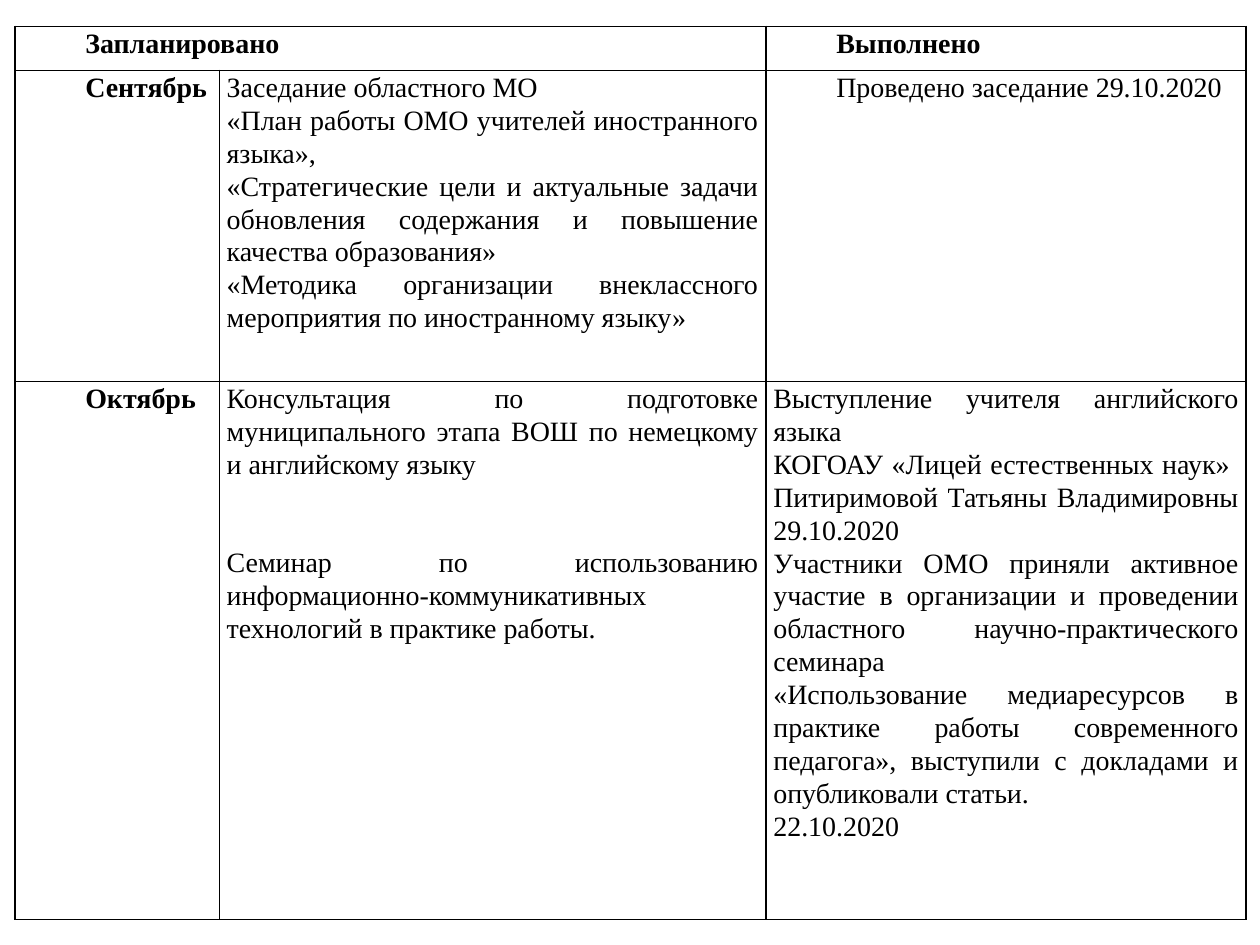
"""Builds a slide with a table of planned and completed work by month."""
import pptx
import pptx.dml.color
import pptx.enum.text
import pptx.oxml
import pptx.oxml.ns
import pptx.util
from pptx.util import Cm, Pt

THEME = {
    "font": "Times New Roman",
    "size": 16,
    "ink": "000000",
    "paper": "FFFFFF",
    "border": 1,
    "line_spacing": 1.06,
    "indent": 1.27,
    "margin": 0.15,
    "gap": 37.6,
}

HEADING, BODY, INDENTED, SEPARATE = "heading", "body", "indented", "separate"

ROWS = [
    [
        [("Запланировано", HEADING)],
        [],
        [("Выполнено", HEADING)],
    ],
    [
        [("Сентябрь", HEADING)],
        [
            ("Заседание областного МО", BODY),
            ("«План работы ОМО учителей иностранного языка»,", BODY),
            ("«Стратегические цели и актуальные задачи обновления содержания "
             "и повышение качества образования»", BODY),
            ("«Методика организации внеклассного мероприятия "
             "по иностранному языку»", BODY),
        ],
        [("Проведено заседание 29.10.2020", INDENTED)],
    ],
    [
        [("Октябрь", HEADING)],
        [
            ("Консультация по подготовке муниципального этапа ВОШ "
             "по немецкому и английскому языку", BODY),
            ("Семинар по использованию информационно-коммуникативных "
             "технологий в практике работы.", SEPARATE),
        ],
        [
            ("Выступление учителя английского языка \v"
             "КОГОАУ «Лицей естественных наук» \v"
             "Питиримовой Татьяны Владимировны 29.10.2020", BODY),
            ("Участники ОМО приняли активное участие в организации "
             "и проведении областного научно-практического семинара", BODY),
            ("«Использование медиаресурсов в практике работы современного "
             "педагога», выступили с докладами и опубликовали статьи.", BODY),
            ("22.10.2020", BODY),
        ],
    ],
]

LEFT, TOP = 0.3, 0.53
COLUMN_WIDTHS = [4.12, 11.02, 9.68]
ROW_HEIGHTS = [0.89, 6.27, 10.85]


def color(name):
    return pptx.dml.color.RGBColor.from_string(THEME[name])


def add_borders(cell):
    properties = cell._tc.get_or_add_tcPr()
    for side in ("lnL", "lnR", "lnT", "lnB"):
        properties.append(pptx.oxml.parse_xml(
            f'<a:{side} {pptx.oxml.ns.nsdecls("a")} w="{Pt(THEME["border"])}">'
            f'<a:solidFill><a:srgbClr val="{THEME["ink"]}"/></a:solidFill>'
            f'</a:{side}>'))


def write_paragraph(paragraph, text, role):
    paragraph.text = text
    paragraph.line_spacing = THEME["line_spacing"]
    alignments = pptx.enum.text.PP_ALIGN
    paragraph.alignment = alignments.LEFT if role == HEADING else alignments.JUSTIFY
    if role in (HEADING, INDENTED):
        paragraph._p.get_or_add_pPr().set("marL", str(Cm(THEME["indent"])))
    if role == SEPARATE:
        paragraph.space_before = Pt(THEME["gap"])
    font = paragraph.font
    font.name = THEME["font"]
    font.size = Pt(THEME["size"])
    font.bold = role == HEADING
    font.color.rgb = color("ink")


def fill_cell(cell, paragraphs):
    add_borders(cell)
    cell.fill.solid()
    cell.fill.fore_color.rgb = color("paper")
    cell.margin_left = cell.margin_right = Cm(THEME["margin"])
    cell.margin_top = cell.margin_bottom = 0
    frame = cell.text_frame
    for index, (text, role) in enumerate(paragraphs):
        paragraph = frame.add_paragraph() if index else frame.paragraphs[0]
        write_paragraph(paragraph, text, role)


def main():
    deck = pptx.Presentation()
    deck.slide_width, deck.slide_height = Cm(25.4), Cm(19.05)
    page = deck.slides.add_slide(deck.slide_layouts[6])
    table = page.shapes.add_table(
        len(ROWS), len(COLUMN_WIDTHS), Cm(LEFT), Cm(TOP),
        Cm(sum(COLUMN_WIDTHS)), Cm(sum(ROW_HEIGHTS))).table
    table.first_row = table.horz_banding = False
    for column, width in zip(table.columns, COLUMN_WIDTHS):
        column.width = Cm(width)
    for row, height, contents in zip(table.rows, ROW_HEIGHTS, ROWS):
        row.height = Cm(height)
        for cell, paragraphs in zip(row.cells, contents):
            fill_cell(cell, paragraphs)
    table.cell(0, 0).merge(table.cell(0, 1))
    deck.save("out.pptx")


if __name__ == "__main__":
    main()
